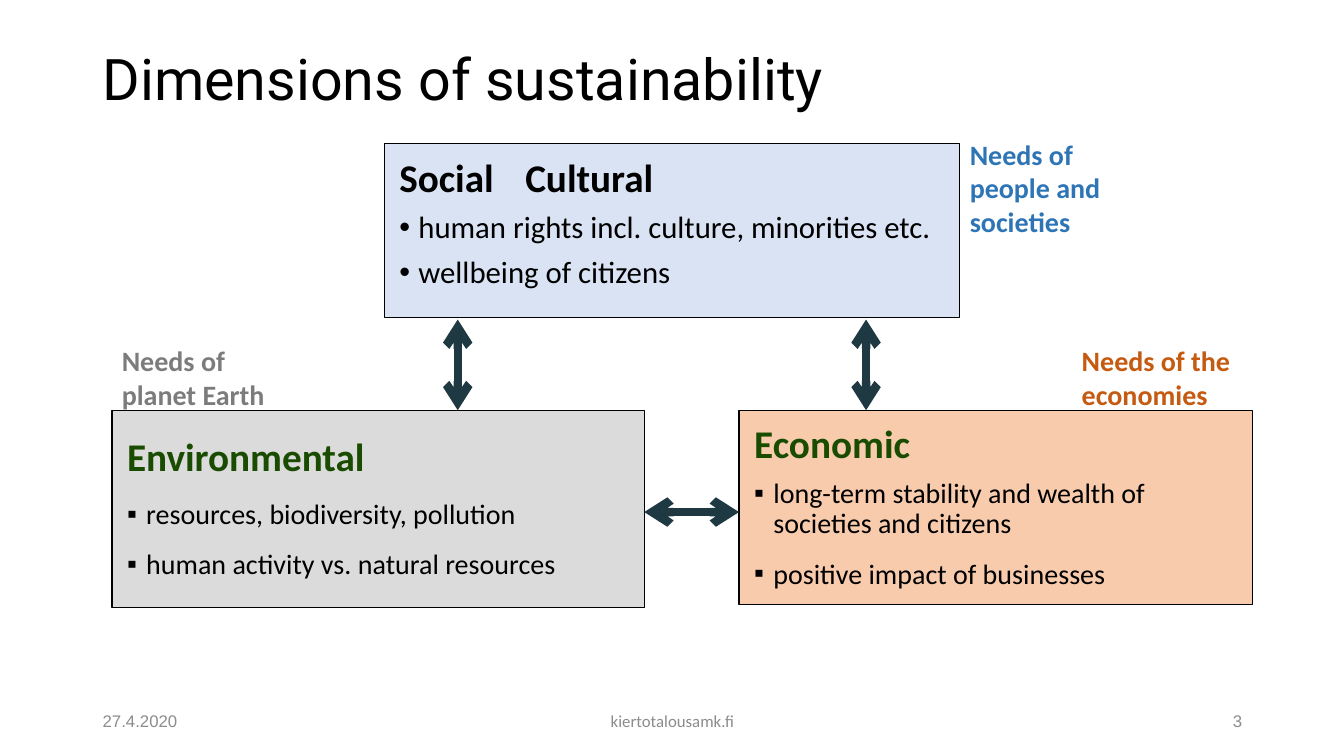
from dataclasses import dataclass

from lxml.etree import SubElement
from pptx import Presentation
from pptx.dml.color import RGBColor
from pptx.enum.shapes import MSO_CONNECTOR, MSO_SHAPE
from pptx.enum.text import MSO_ANCHOR as Anchor, MSO_AUTO_SIZE as AutoSize, PP_ALIGN as Align
from pptx.oxml.ns import qn
from pptx.slide import Slide
from pptx.text.text import _Paragraph as Paragraph
from pptx.util import Emu, Pt

PX = 9144
BLACK = RGBColor(0x00, 0x00, 0x00)
PALE_BLUE = RGBColor(0xDA, 0xE3, 0xF3)
PALE_GREY = RGBColor(0xDB, 0xDB, 0xDB)
PEACH = RGBColor(0xF8, 0xCB, 0xAD)
GREEN = RGBColor(0x19, 0x4C, 0x00)
TEAL = RGBColor(0x1F, 0x39, 0x43)
BLUE = RGBColor(0x2E, 0x75, 0xB6)
GREY = RGBColor(0x7C, 0x7C, 0x7C)
ORANGE = RGBColor(0xC5, 0x5A, 0x11)
FOOTER_GREY = RGBColor(0x8C, 0x8C, 0x8C)


@dataclass(frozen=True)
class Box:
    left: int
    top: int
    width: int
    height: int

    def emu(self) -> tuple[Emu, ...]:
        return tuple(px(n) for n in (self.left, self.top, self.width, self.height))


@dataclass(frozen=True)
class Dimension:
    box: Box
    heading: str
    heading_color: RGBColor
    heading_indent: int
    points: tuple[str, ...]
    bullet: str
    point_size: int
    space_before: float
    space_after: float
    heading_after: float
    fill: RGBColor
    border: float
    anchor: Anchor


@dataclass(frozen=True)
class Caption:
    box: Box
    text: str
    size: int
    font: str
    color: RGBColor
    bold: bool = False
    align: Align = Align.LEFT
    anchor: Anchor = Anchor.MIDDLE
    grow: bool = False
    line_spacing: float = 1.0


@dataclass(frozen=True)
class Arrow:
    x1: int
    y1: int
    x2: int
    y2: int


DIMENSIONS = (
    Dimension(Box(381, 142, 571, 173), "Social\tCultural", BLACK, 25,
              ("human rights incl. culture, minorities etc.", "wellbeing of citizens"),
              "•", 22, 8.4, 0, 0, PALE_BLUE, 0.75, Anchor.TOP),
    Dimension(Box(111, 407, 528, 196), "Environmental", GREEN, 38,
              ("resources, biodiversity, pollution", "human activity vs. natural resources"),
              "▪", 20, 8.4, 6, 6, PALE_GREY, 1, Anchor.MIDDLE),
    Dimension(Box(733, 407, 509, 193), "Economic", GREEN, 0,
              ("long-term stability and wealth of societies and citizens",
               "positive impact of businesses"),
              "▪", 20, 8.5, 6, 0, PEACH, 1, Anchor.MIDDLE),
)

ARROWS = (Arrow(454, 317, 454, 407), Arrow(859, 317, 859, 407), Arrow(639, 508, 733, 508))


def need(box: Box, text: str, color: RGBColor) -> Caption:
    return Caption(box, text, 20, "Calibri", color, bold=True, anchor=Anchor.TOP, grow=True)


def footer(left: int, width: int, text: str, font: str, align: Align) -> Caption:
    return Caption(Box(left, 695, width, 40), text, 12, font, FOOTER_GREY, align=align)


TITLE = Caption(Box(92, 33, 1150, 97), "Dimensions of sustainability", 41, "Roboto", BLACK,
                line_spacing=0.9)
CAPTIONS = (
    need(Box(952, 131, 163, 111), "Needs of people and societies", BLUE),
    need(Box(111, 336, 163, 77), "Needs of planet Earth", GREY),
    need(Box(1063, 336, 179, 77), "Needs of the economies", ORANGE),
    footer(92, 300, "27.4.2020", "Arial", Align.LEFT),
    footer(442, 450, "kiertotalousamk.fi", "Calibri", Align.CENTER),
    footer(942, 300, "3", "Arial", Align.RIGHT),
)


def px(length: int) -> Emu:
    return Emu(length * PX)


def format_runs(paragraph: Paragraph, size: int, font: str, color: RGBColor, bold: bool) -> None:
    for run in paragraph.runs:
        run.font.size = Pt(size)
        run.font.name = font
        run.font.color.rgb = color
        run.font.bold = bold


def hang(paragraph: Paragraph, indent: int) -> None:
    properties = paragraph._p.get_or_add_pPr()
    properties.set("marL", str(px(indent)))
    properties.set("indent", str(px(-indent)))


def add_bullet(paragraph: Paragraph, bullet: str) -> None:
    properties = paragraph._p.get_or_add_pPr()
    SubElement(SubElement(properties, qn("a:buClr")), qn("a:srgbClr")).set("val", str(BLACK))
    SubElement(properties, qn("a:buFont")).set("typeface", "Arial")
    SubElement(properties, qn("a:buChar")).set("char", bullet)


def draw_dimension(slide: Slide, dimension: Dimension) -> None:
    panel = slide.shapes.add_shape(MSO_SHAPE.RECTANGLE, *dimension.box.emu())
    panel.shadow.inherit = False
    panel.fill.solid()
    panel.fill.fore_color.rgb = dimension.fill
    panel.line.color.rgb = BLACK
    panel.line.width = Pt(dimension.border)

    frame = panel.text_frame
    frame.word_wrap = True
    frame.vertical_anchor = dimension.anchor
    frame.margin_left = frame.margin_right = frame.margin_top = frame.margin_bottom = px(15)
    frame.text = "\n".join((dimension.heading, *dimension.points))
    heading, *points = frame.paragraphs
    hang(heading, dimension.heading_indent)
    heading.space_after = Pt(dimension.heading_after)
    format_runs(heading, 28, "Calibri", dimension.heading_color, True)
    for point in points:
        point.level = 1
        hang(point, 19)
        add_bullet(point, dimension.bullet)
        point.space_before = Pt(dimension.space_before)
        point.space_after = Pt(dimension.space_after)
        format_runs(point, dimension.point_size, "Calibri", BLACK, False)
    for paragraph in frame.paragraphs:
        paragraph.alignment = Align.LEFT
        paragraph.line_spacing = 0.9


def draw_caption(slide: Slide, caption: Caption) -> None:
    frame = slide.shapes.add_textbox(*caption.box.emu()).text_frame
    frame.word_wrap = True
    frame.auto_size = AutoSize.SHAPE_TO_FIT_TEXT if caption.grow else AutoSize.NONE
    frame.vertical_anchor = caption.anchor
    frame.text = caption.text
    paragraph = frame.paragraphs[0]
    paragraph.alignment = caption.align
    paragraph.line_spacing = caption.line_spacing
    format_runs(paragraph, caption.size, caption.font, caption.color, caption.bold)


def draw_arrow(slide: Slide, arrow: Arrow) -> None:
    ends = (px(n) for n in (arrow.x1, arrow.y1, arrow.x2, arrow.y2))
    link = slide.shapes.add_connector(MSO_CONNECTOR.STRAIGHT, *ends)
    link.line.color.rgb = TEAL
    link.line.width = Pt(6)
    outline = link.line._get_or_add_ln()
    for end in ("a:headEnd", "a:tailEnd"):
        SubElement(outline, qn(end)).set("type", "arrow")
    SubElement(link._element.spPr, qn("a:effectLst"))


def main() -> None:
    deck = Presentation()
    deck.slide_width, deck.slide_height = px(1333), px(750)
    slide = deck.slides.add_slide(deck.slide_layouts[6])
    draw_caption(slide, TITLE)
    for dimension in DIMENSIONS:
        draw_dimension(slide, dimension)
    for arrow in ARROWS:
        draw_arrow(slide, arrow)
    for caption in CAPTIONS:
        draw_caption(slide, caption)
    deck.save("out.pptx")


if __name__ == "__main__":
    main()
